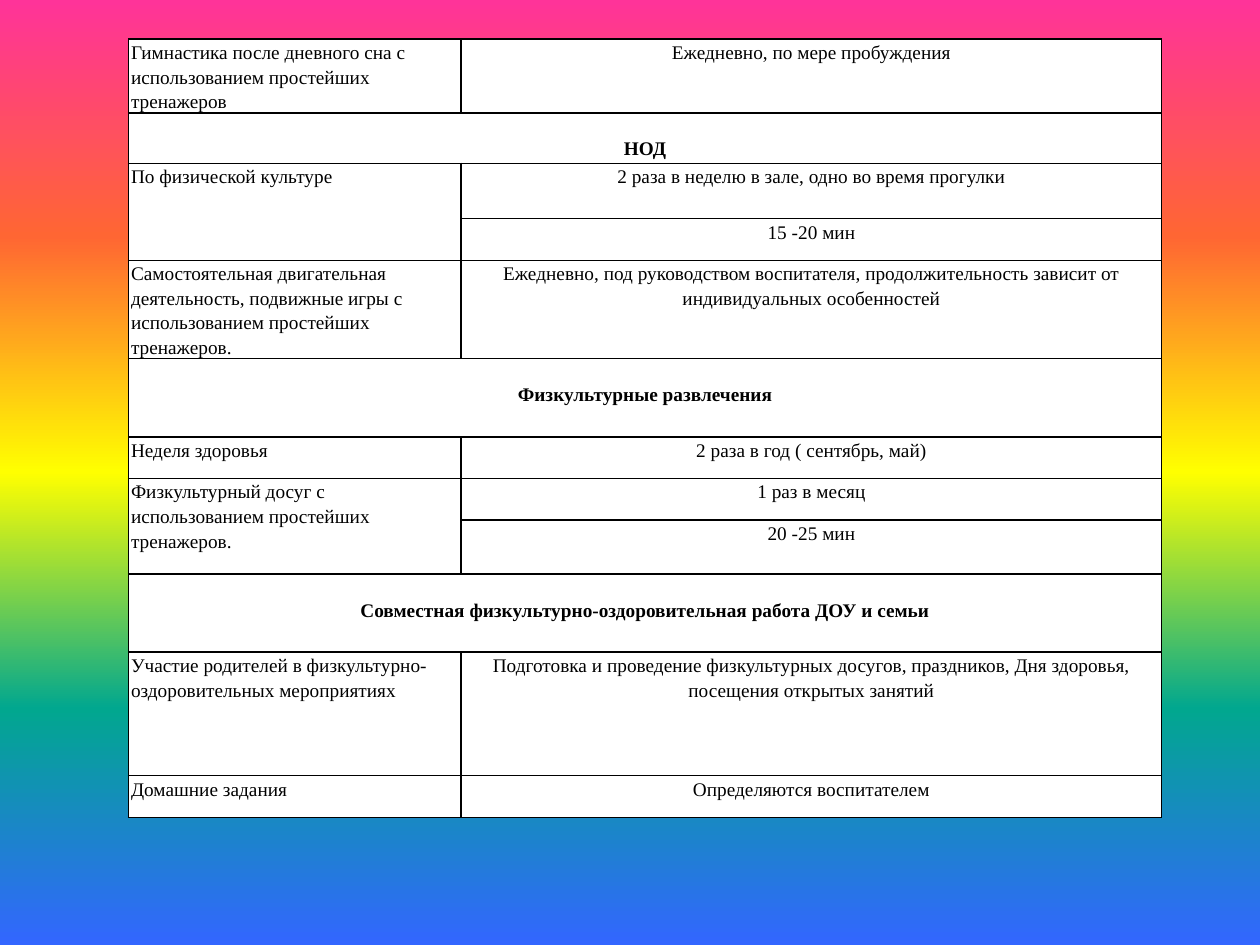
from copy import deepcopy
from dataclasses import dataclass

from pptx import Presentation
from pptx import util as u
from pptx.dml.color import RGBColor
from pptx.enum import text
from pptx.oxml import parse_xml
from pptx.oxml.ns import nsdecls, qn


@dataclass(frozen=True)
class Theme:
    """Colours, font and type size of the slide."""
    rainbow: tuple = ("FF3399", "FF6633", "FFFF00", "01A78F", "3366FF")
    ink: str = "000000"
    paper: str = "FFFFFF"
    font: str = "Times New Roman"
    size: float = 11
    spacing: float = 1.15
    border: float = 1


THEME = Theme()
COLUMNS = (2.64, 5.56)
SCHEDULE = [
    (0.58, "Гимнастика после дневного сна с использованием простейших тренажеров",
     "Ежедневно, по мере пробуждения"),
    (0.4, "НОД", None),
    (0.44, "По физической культуре", "2 раза в неделю в зале, одно во время прогулки"),
    (0.33, None, "15 -20 мин"),
    (0.78, "Самостоятельная двигательная деятельность, подвижные игры с "
           "использованием простейших тренажеров.",
     "Ежедневно, под руководством воспитателя, продолжительность зависит от "
     "индивидуальных особенностей"),
    (0.62, "Физкультурные развлечения", None),
    (0.33, "Неделя здоровья", "2 раза в год ( сентябрь, май)"),
    (0.33, "Физкультурный досуг с использованием простейших тренажеров.",
     "1 раз в месяц"),
    (0.43, None, "20 -25 мин"),
    (0.62, "Совместная физкультурно-оздоровительная работа ДОУ и семьи", None),
    (0.98, "Участие родителей в физкультурно-оздоровительных мероприятиях",
     "Подготовка и проведение физкультурных досугов, праздников, Дня здоровья, "
     "посещения открытых занятий"),
    (0.33, "Домашние задания", "Определяются воспитателем"),
]


def write(cell, wording, bold=False, centred=False, top=0):
    """Put formatted wording into a cell."""
    cell.margin_top = u.Inches(top)
    paragraph = cell.text_frame.paragraphs[0]
    paragraph.alignment = text.PP_ALIGN.CENTER if centred else text.PP_ALIGN.LEFT
    paragraph.line_spacing = THEME.spacing
    run = paragraph.add_run()
    run.text = wording
    run.font.name = THEME.font
    run.font.size = u.Pt(THEME.size)
    run.font.bold = bold
    run.font.color.rgb = RGBColor.from_string(THEME.ink)


def style_cell(cell):
    """Give a cell its margins, borders and fill."""
    cell.margin_left = cell.margin_right = u.Inches(0.02)
    cell.margin_top = cell.margin_bottom = 0
    cell.vertical_anchor = text.MSO_ANCHOR.TOP
    properties = cell._tc.get_or_add_tcPr()
    for side in ("lnL", "lnR", "lnT", "lnB"):
        properties.append(parse_xml(
            f'<a:{side} {nsdecls("a")} w="{u.Pt(THEME.border)}"><a:solidFill>'
            f'<a:srgbClr val="{THEME.ink}"/></a:solidFill></a:{side}>'))
    cell.fill.solid()
    cell.fill.fore_color.rgb = RGBColor.from_string(THEME.paper)


def paint_background(slide):
    """Fill the slide with evenly spaced rainbow stops from top to bottom."""
    fill = slide.background.fill
    fill.gradient()
    fill.gradient_angle = 270
    stop_list = next(slide.element.iter(qn("a:gsLst")))
    while len(stop_list) < len(THEME.rainbow):
        stop_list.append(deepcopy(stop_list[0]))
    for index, (stop, colour) in enumerate(zip(fill.gradient_stops, THEME.rainbow)):
        stop.position = index / (len(THEME.rainbow) - 1)
        stop.color.rgb = RGBColor.from_string(colour)


def add_schedule(slide, left, top):
    """Build the activity table with its section rows and shared labels."""
    table = slide.shapes.add_table(
        len(SCHEDULE), len(COLUMNS), u.Inches(left), u.Inches(top),
        u.Inches(sum(COLUMNS)), u.Inches(sum(row[0] for row in SCHEDULE))).table
    table.first_row = table.horz_banding = False
    for column, width in zip(table.columns, COLUMNS):
        column.width = u.Inches(width)
    for cell in table.iter_cells():
        style_cell(cell)
    for index, (height, activity, timing) in enumerate(SCHEDULE):
        table.rows[index].height = u.Inches(height)
        label, detail = table.cell(index, 0), table.cell(index, 1)
        if timing is None:
            label.merge(detail)
            write(label, activity, bold=True, centred=True, top=0.18)
            continue
        write(detail, timing, centred=True)
        if activity is None:
            table.cell(index - 1, 0).merge(label)
        else:
            write(label, activity)


def main():
    """Create and save the presentation."""
    deck = Presentation()
    deck.slide_width, deck.slide_height = u.Inches(10), u.Inches(7.5)
    slide = deck.slides.add_slide(deck.slide_layouts[6])
    paint_background(slide)
    add_schedule(slide, 1.02, 0.31)
    deck.save("out.pptx")


if __name__ == "__main__":
    main()
